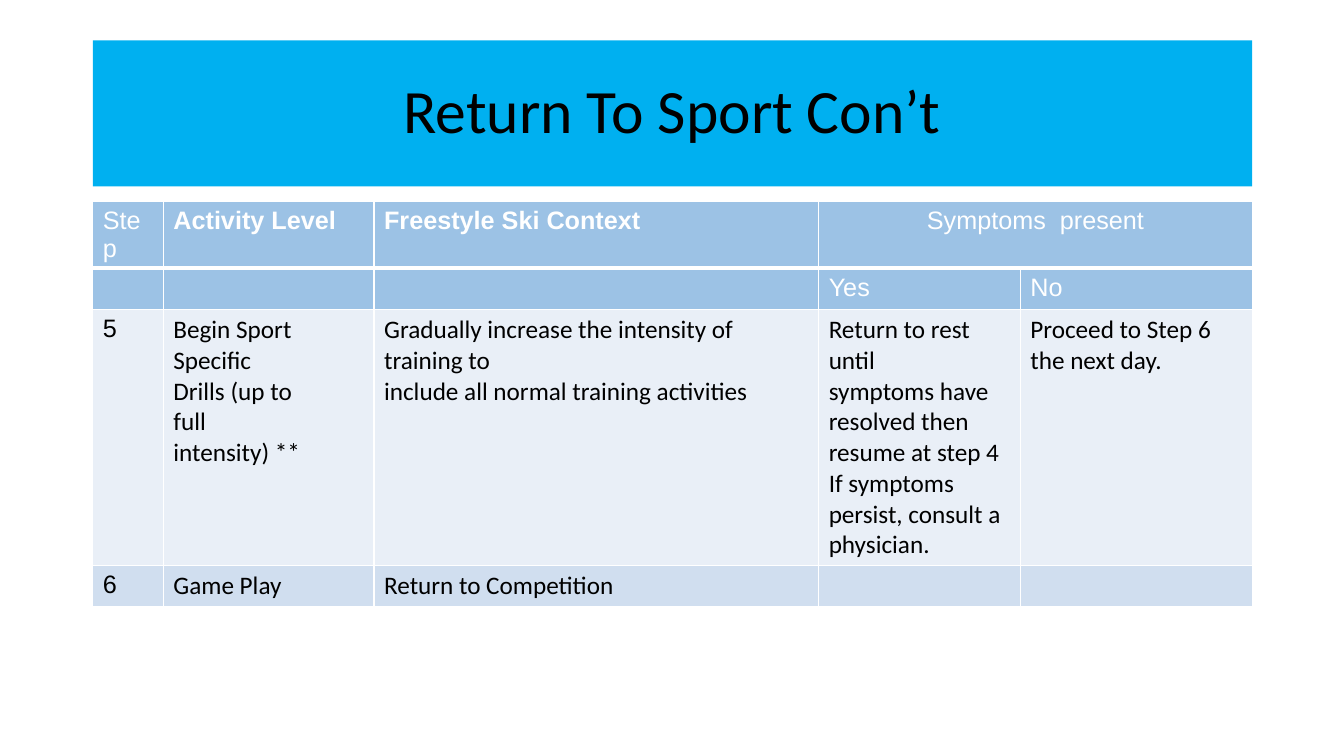
from pptx import Presentation
from pptx.dml.color import RGBColor
from pptx.enum.text import MSO_ANCHOR, PP_ALIGN as AL
from pptx.oxml.ns import qn
from pptx.util import Inches, Pt
from lxml.etree import SubElement


def write(tf, text, size=18, font="Calibri", color="000000", bold=False, align=AL.LEFT, spacing=1.0):
    for i, line in enumerate(text.split("\n")):
        p = tf.add_paragraph() if i else tf.paragraphs[0]
        p.alignment, p.line_spacing = align, spacing
        r = p.add_run()
        r.text = line
        r.font.size, r.font.name, r.font.bold = Pt(size), font, bold
        r.font.color.rgb = RGBColor.from_string(color)


def border(cell, side, width):
    ln = SubElement(cell._tc.get_or_add_tcPr(), qn("a:ln" + side), w=str(Pt(width)))
    SubElement(SubElement(ln, qn("a:solidFill")), qn("a:srgbClr"), val="FFFFFF")


prs = Presentation()
prs.slide_width, prs.slide_height = Inches(13.33), Inches(7.5)
slide = prs.slides.add_slide(prs.slide_layouts[5])

# Title banner
title = slide.shapes.title
title.left, title.top, title.width, title.height = [Inches(v) for v in (0.92, 0.4, 11.5, 1.45)]
title.fill.solid()
title.fill.fore_color.rgb = RGBColor.from_string("00B0F0")
title.text_frame.vertical_anchor = MSO_ANCHOR.MIDDLE
write(title.text_frame, "Return To Sport Con’t", size=44, align=AL.CENTER, spacing=0.9)

# Table contents
rows = [
    ["Step", "Activity Level", "Freestyle Ski Context", "Symptoms  present", ""],
    ["", "", "", "Yes", "No"],
    ["5",
     "Begin Sport\nSpecific\nDrills (up to\nfull\nintensity) **",
     "Gradually increase the intensity of training to\ninclude all normal training activities",
     "Return to rest until\nsymptoms have\nresolved then\nresume at step 4\n"
     "If symptoms\npersist, consult a\nphysician.",
     "Proceed to Step 6\nthe next day."],
    ["6", "Game Play", "Return to Competition", "", ""],
]
row_fills = ["9CC2E5", "9CC2E5", "E9EFF7", "D0DEEF"]
col_widths = [0.7, 2.09, 4.41, 2, 2.3]
row_height = 0.41

# Table grid
table = slide.shapes.add_table(len(rows), len(col_widths), Inches(0.92), Inches(2),
                               Inches(sum(col_widths)), Inches(row_height * len(rows))).table
for col, width in zip(table.columns, col_widths):
    col.width = Inches(width)
table.cell(0, 3).merge(table.cell(0, 4))

# Cells
for i, (row, fill) in enumerate(zip(rows, row_fills)):
    for j, text in enumerate(row):
        cell = table.cell(i, j)
        for side in "LRTB":
            under_header = (i, side) in [(0, "B"), (1, "T")]
            border(cell, side, 3 if under_header else 1)
        cell.fill.solid()
        cell.fill.fore_color.rgb = RGBColor.from_string(fill)
        if text:
            header = i < 2
            write(cell.text_frame, text,
                  font="Arial" if header or j == 0 else "Calibri",
                  color="FFFFFF" if header else "000000",
                  bold=i == 0 and j in (1, 2),
                  align=AL.CENTER if (i, j) == (0, 3) else AL.LEFT)

prs.save("out.pptx")
